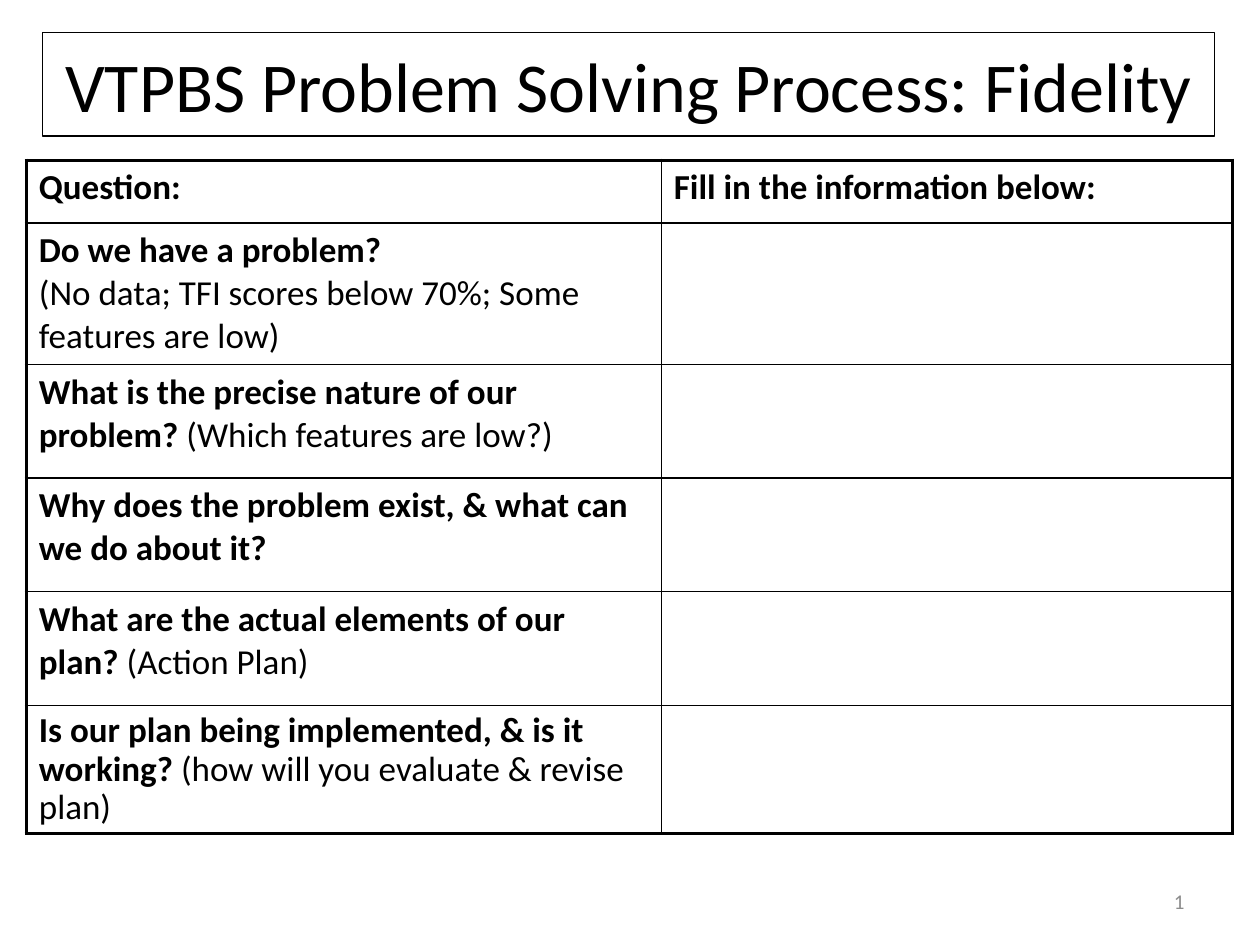
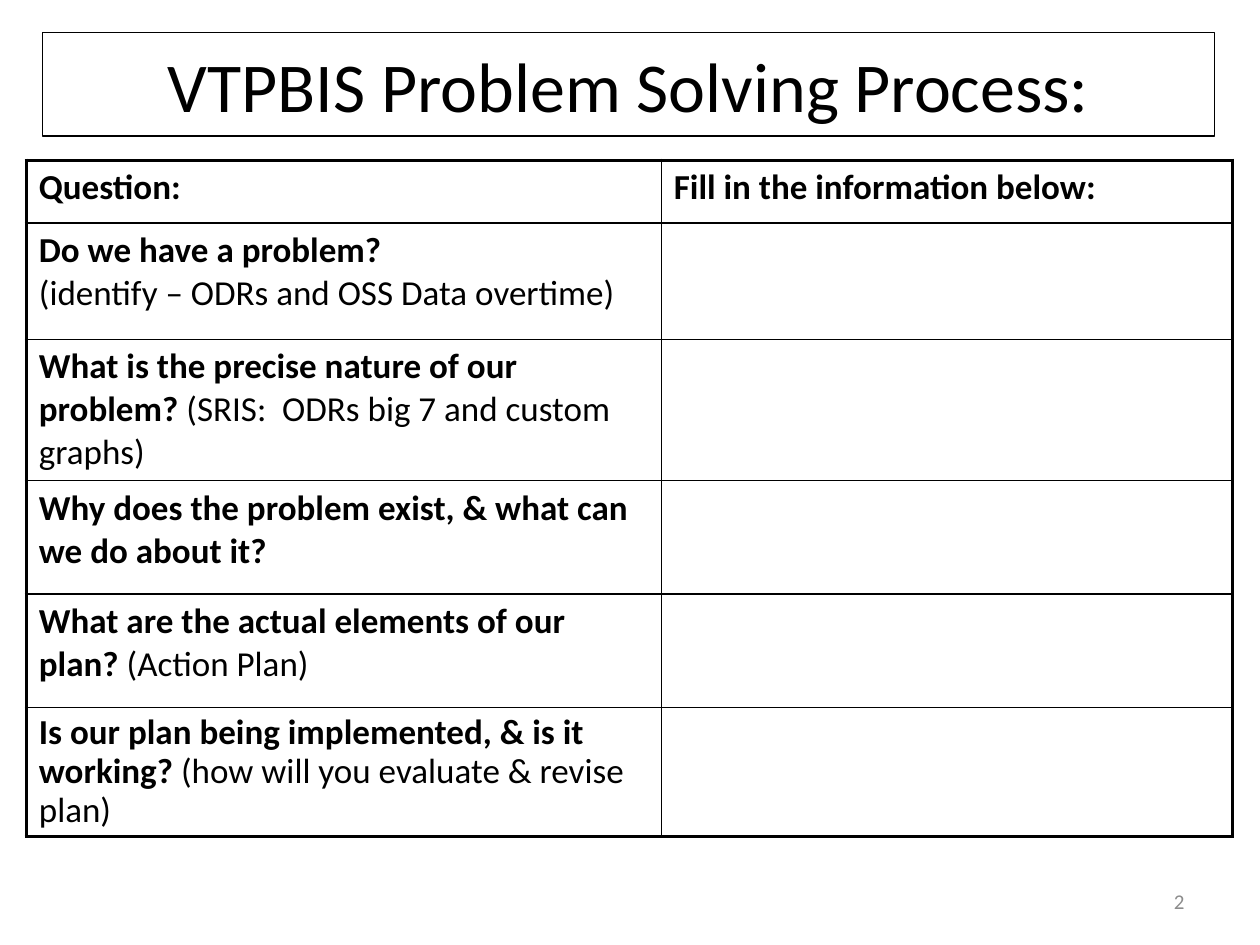
from lxml import etree
from pptx import Presentation
from pptx.dml.color import RGBColor
from pptx.enum.text import MSO_ANCHOR as Anchor, MSO_AUTO_SIZE as AutoSize, PP_ALIGN as Align
from pptx.oxml import parse_xml
from pptx.oxml.ns import nsdecls, qn
from pptx.util import Cm, Pt

# Shared look
FONT = "Calibri"
BLACK, GRAY = "000000", "8C8C8C"
OUTER, INNER = 2.25, 1
COLUMNS = (12.8, 11.51)
HEADINGS = ("Question:", "Fill in the information below:")
HEADING_HEIGHT, TWO_LINES, THREE_LINES, LAST_HEIGHT = 1.27, 2.29, 2.84, 2.59

# Rows that both slides end with: question, hint, row height
SHARED_ROWS = [
    ("Why does the problem exist, & what can we do about it?", "", TWO_LINES),
    ("What are the actual elements of our plan? ", "(Action Plan)", TWO_LINES),
    ("Is our plan being implemented, & is it working? ",
     "(how will you evaluate & revise plan)", LAST_HEIGHT),
]

# Title and opening rows of each slide; "\n" marks a line break
WORKSHEETS = [
    ("VTPBS Problem Solving Process: Fidelity", [
        ("Do we have a problem?\n",
         "(No data; TFI scores below 70%; Some features are low)", THREE_LINES),
        ("What is the precise nature of our problem?",
         " (Which features are low?)", TWO_LINES),
    ]),
    ("VTPBIS Problem Solving Process:", [
        ("Do we have a problem?\n",
         "(identify – ODRs and OSS Data overtime)", 2.34),
        ("What is the precise nature of our problem?",
         " (SRIS:  ODRs big 7 and custom graphs)", THREE_LINES),
    ]),
]


def color(value):
    return RGBColor.from_string(value)


def style_font(font, size, bold=False):
    font.name, font.size, font.bold = FONT, Pt(size), bold
    font.color.rgb = color(BLACK)


def add_title(slide, text):
    title = slide.shapes.title
    title.left, title.top, title.width, title.height = Cm(0.86), Cm(0.66), Cm(23.62), Cm(2.08)
    title.line.color.rgb = color(BLACK)
    title.line.width = Pt(0.75)
    frame = title.text_frame
    frame.text = text
    frame.word_wrap = True
    frame.auto_size = AutoSize.NONE
    frame.vertical_anchor = Anchor.MIDDLE
    frame.paragraphs[0].alignment = Align.CENTER
    style_font(frame.paragraphs[0].runs[0].font, 40)


def set_borders(cell, widths):
    properties = cell._tc.get_or_add_tcPr()
    for side, width in zip("LRTB", widths):
        line = etree.SubElement(properties, qn(f"a:ln{side}"), w=str(Pt(width)))
        fill = etree.SubElement(line, qn("a:solidFill"))
        etree.SubElement(fill, qn("a:srgbClr"), val=BLACK)


def fill_cell(cell, question, hint=""):
    paragraph = cell.text_frame.paragraphs[0]
    for text, bold in ((question, True), (hint, False)):
        if text:
            run = paragraph.add_run()
            run.text = text.rstrip("\n")
            style_font(run.font, 20, bold)
        if text.endswith("\n"):
            paragraph.add_line_break()
    return paragraph


def add_question_table(slide, rows):
    heights = [HEADING_HEIGHT] + [height for _, _, height in rows]
    table = slide.shapes.add_table(
        len(heights), len(COLUMNS), Cm(0.53), Cm(3.23), Cm(sum(COLUMNS)), Cm(sum(heights))).table
    table.first_row = table.horz_banding = False
    for column, width in zip(table.columns, COLUMNS):
        column.width = Cm(width)
    for row, height in zip(table.rows, heights):
        row.height = Cm(height)

    # Heavy frame outside, thin grid inside
    last_row, last_column = len(heights) - 1, len(COLUMNS) - 1
    for r in range(len(heights)):
        for c in range(len(COLUMNS)):
            cell = table.cell(r, c)
            on_edge = (c == 0, c == last_column, r == 0, r == last_row)
            set_borders(cell, [OUTER if edge else INNER for edge in on_edge])
            cell.fill.background()

    for c, heading in enumerate(HEADINGS):
        fill_cell(table.cell(0, c), heading)
    for r, (question, hint, _) in enumerate(rows, start=1):
        paragraph = fill_cell(table.cell(r, 0), question, hint)
    paragraph.line_spacing = 0.9


def add_slide_number(slide, number):
    box = slide.shapes.add_textbox(Cm(18.21), Cm(17.65), Cm(5.92), Cm(1.02))
    frame = box.text_frame
    frame.word_wrap = True
    frame.vertical_anchor = Anchor.MIDDLE
    paragraph = frame.paragraphs[0]
    paragraph.alignment = Align.RIGHT
    paragraph._p.append(parse_xml(
        f'<a:fld {nsdecls("a")} id="{{B6F15528-21DE-4FAA-801E-634DDDAF4B2B}}" type="slidenum">'
        f'<a:rPr lang="en-US" sz="1200"><a:solidFill><a:srgbClr val="{GRAY}"/></a:solidFill>'
        f'<a:latin typeface="{FONT}"/></a:rPr><a:t>{number}</a:t></a:fld>'))


def main():
    presentation = Presentation()
    presentation.slide_width, presentation.slide_height = Cm(25.4), Cm(19.05)
    title_only = presentation.slide_layouts[5]
    for number, (title, opening_rows) in enumerate(WORKSHEETS, start=1):
        slide = presentation.slides.add_slide(title_only)
        add_title(slide, title)
        add_question_table(slide, opening_rows + SHARED_ROWS)
        add_slide_number(slide, number)
    presentation.save("out.pptx")


if __name__ == "__main__":
    main()
